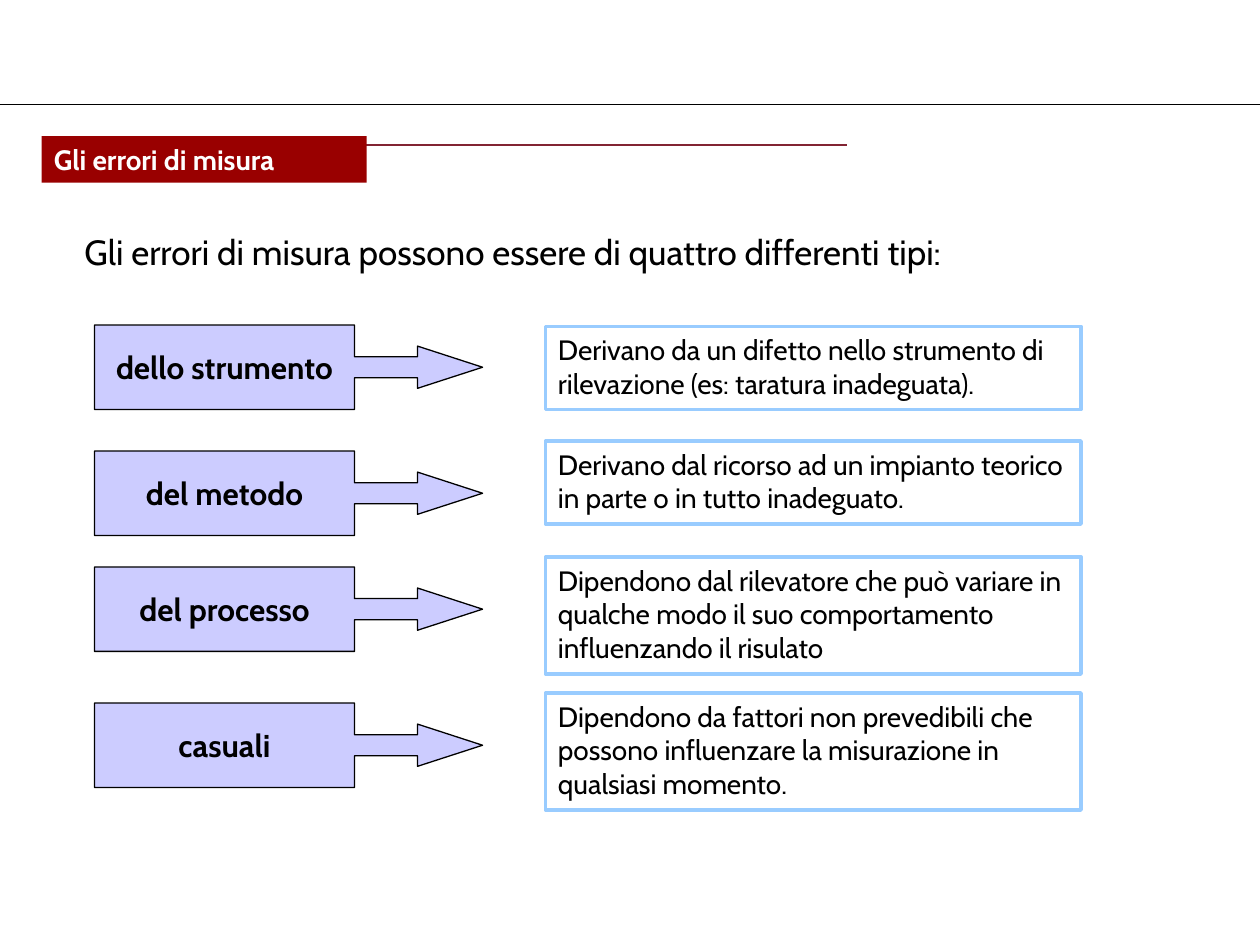
from lxml.etree import SubElement
from pptx import Presentation
from pptx.dml.color import RGBColor
from pptx.enum.shapes import MSO_CONNECTOR as Connector, MSO_SHAPE as Shape
from pptx.enum.text import MSO_ANCHOR as Anchor, PP_ALIGN as Align
from pptx.oxml.ns import qn
from pptx.util import Inches, Pt

COLORS = {
    "black": "000000",
    "white": "FFFFFF",
    "banner": "990000",
    "rule": "822433",
    "callout": "CCCCFF",
    "border": "99CCFF",
}
FONT = "Cabin"
ERRORS = [
    ("dello strumento", 2.58, 2.59, 0.66,
     "Derivano da un difetto nello strumento di rilevazione (es: taratura inadeguata)."),
    ("del metodo", 3.58, 3.5, 0.66,
     "Derivano dal ricorso ad un impianto teorico in parte o in tutto inadeguato."),
    ("del processo", 4.5, 4.42, 0.93,
     "Dipendono dal rilevatore che può variare in qualche modo il suo comportamento "
     "influenzando il risulato"),
    ("casuali", 5.58, 5.5, 0.93,
     "Dipendono da fattori non prevedibili che possono influenzare la misurazione in "
     "qualsiasi momento."),
]


def color(name):
    return RGBColor.from_string(COLORS[name])


def add_rule(page, left, top, right, name, weight):
    rule = page.shapes.add_connector(
        Connector.STRAIGHT, Inches(left), Inches(top), Inches(right), Inches(top))
    rule.line.color.rgb = color(name)
    rule.line.width = Pt(weight)
    SubElement(rule._element.spPr, qn("a:effectLst"))


def add_panel(page, kind, box, fill=None, line=None, weight=0.75):
    panel = page.shapes.add_shape(kind, *map(Inches, box))
    panel.shadow.inherit = False
    if fill:
        panel.fill.solid()
        panel.fill.fore_color.rgb = color(fill)
    else:
        panel.fill.background()
    if line:
        panel.line.color.rgb = color(line)
        panel.line.width = Pt(weight)
    else:
        panel.line.fill.background()
    return panel


def write(shape, text, size, name="black", bold=False, align=Align.LEFT,
          anchor=Anchor.TOP, wrap=True):
    frame = shape.text_frame
    frame.word_wrap = wrap
    frame.vertical_anchor = anchor
    para = frame.paragraphs[0]
    para.text = text
    para.alignment = align
    para.font.name = FONT
    para.font.size = Pt(size)
    para.font.bold = bold
    para.font.color.rgb = color(name)


def add_header(page, box):
    left, top, width, height = box
    add_rule(page, 0, 0.83, 10, "black", 1)
    add_rule(page, left + 0.26, top + 0.07, 6.72, "rule", 1.5)
    banner = add_panel(page, Shape.RECTANGLE, box, fill="banner")
    write(banner, "Gli errori di misura", 16, "white", bold=True)


def add_intro(page, box):
    intro = page.shapes.add_textbox(*map(Inches, box))
    frame = intro.text_frame
    frame.margin_left = frame.margin_right = frame.margin_top = frame.margin_bottom = 0
    write(intro, "Gli errori di misura possono essere di quattro differenti tipi:", 20)


def add_callout(page, box, text):
    callout = add_panel(page, Shape.RIGHT_ARROW_CALLOUT, box, "callout", "black")
    for index, value in enumerate((0.25, 0.25, 0.77, 0.67)):
        callout.adjustments[index] = value
    write(callout, text, 18, bold=True, align=Align.CENTER, anchor=Anchor.MIDDLE, wrap=False)


def add_description(page, box, text):
    panel = add_panel(page, Shape.RECTANGLE, box, line="border", weight=2)
    write(panel, text, 16)


def main():
    deck = Presentation()
    deck.slide_width, deck.slide_height = Inches(10), Inches(7.5)
    page = deck.slides.add_slide(deck.slide_layouts[6])
    add_header(page, (0.33, 1.08, 2.58, 0.37))
    add_intro(page, (0.67, 1.83, 8.42, 0.33))
    for label, label_top, top, height, text in ERRORS:
        add_callout(page, (0.75, label_top, 3.08, 0.67), label)
        add_description(page, (4.33, top, 4.25, height), text)
    deck.save("out.pptx")


if __name__ == "__main__":
    main()
